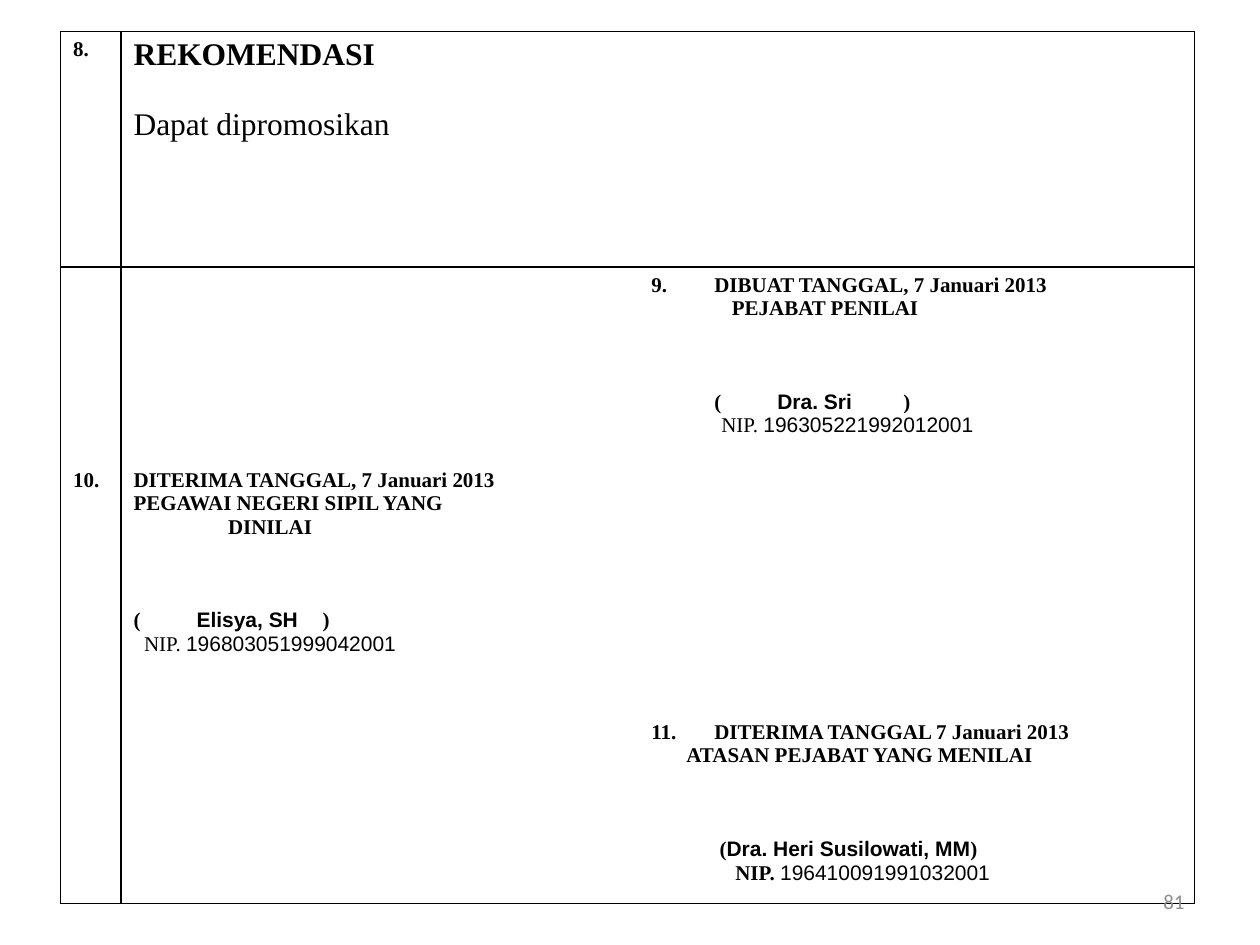
from lxml.etree import SubElement
from pptx import Presentation
from pptx.dml.color import RGBColor
from pptx.enum.text import MSO_ANCHOR as Anchor, PP_ALIGN as Align
from pptx.oxml.ns import qn
from pptx.util import Pt

BLACK = RGBColor(0x00, 0x00, 0x00)
GREY = RGBColor(0x8C, 0x8C, 0x8C)
SERIF = "Times New Roman"
SANS = "Arial"
SIGN_GAP = 40
COLUMN_WIDTHS = [34.56, 295.92, 317.52]
ROW_HEIGHTS = [134.64, 111.6, 144, 108]


def add_run(paragraph, text, font=SERIF, size=12, bold=True, color=BLACK):
    run = paragraph.add_run()
    run.text = text
    run.font.name = font
    run.font.size = Pt(size)
    run.font.bold = bold
    run.font.color.rgb = color


def format_paragraph(paragraph, align=Align.JUSTIFY, before=0, indent=0, tabs=()):
    paragraph.alignment = align
    paragraph.space_before = Pt(before)
    properties = paragraph._p.get_or_add_pPr()
    properties.set("marL", str(Pt(indent)))
    properties.set("indent", "0")
    if tabs:
        tab_list = SubElement(properties, qn("a:tabLst"))
        for position in tabs:
            SubElement(tab_list, qn("a:tab"), pos=str(Pt(position)), algn="l")


def write_lines(frame, lines):
    for index, (runs, layout) in enumerate(lines):
        paragraph = frame.add_paragraph() if index else frame.paragraphs[0]
        format_paragraph(paragraph, **layout)
        for text, style in runs:
            add_run(paragraph, text, **style)


def line(text, layout=None, **style):
    return [(text, style)], layout or {}


def signature(opening, name, closing, **layout):
    runs = [(opening, {}), (name, {"font": SANS}), (closing, {})]
    return runs, {"before": SIGN_GAP, **layout}


def employee_number(number, indent, bold=False):
    runs = [("NIP. ", {"bold": bold}), (number, {"font": SANS, "bold": False})]
    return runs, {"indent": indent}


def set_borders(cell, sides):
    properties = cell._tc.get_or_add_tcPr()
    for position, side in enumerate("LRTB"):
        border = SubElement(properties, qn(f"a:ln{side}"), w=str(Pt(1)))
        properties.insert(position, border)
        if side in sides:
            fill = SubElement(border, qn("a:solidFill"))
            SubElement(fill, qn("a:srgbClr"), val=str(BLACK))
        else:
            SubElement(border, qn("a:noFill"))


def border_sides(row, column):
    sides = "L" if column < 2 else "R"
    if column == 0:
        sides += "R"
    if row == 0:
        sides += "TB"
        if column == 1:
            sides += "R"
    if row == 1:
        sides += "T"
    if row == len(ROW_HEIGHTS) - 1:
        sides += "B"
    return sides


def add_assessment_table(slide, left, top):
    table = slide.shapes.add_table(
        len(ROW_HEIGHTS), len(COLUMN_WIDTHS), Pt(left), Pt(top),
        Pt(sum(COLUMN_WIDTHS)), Pt(sum(ROW_HEIGHTS))).table
    table.first_row = False
    table.horz_banding = False
    for column, width in zip(table.columns, COLUMN_WIDTHS):
        column.width = Pt(width)
    for row, height in zip(table.rows, ROW_HEIGHTS):
        row.height = Pt(height)
    for row in range(len(ROW_HEIGHTS)):
        for column in range(len(COLUMN_WIDTHS)):
            cell = table.cell(row, column)
            cell.fill.background()
            set_borders(cell, border_sides(row, column))
    table.cell(0, 1).merge(table.cell(0, 2))

    contents = {
        (0, 0): [line("8.")],
        (0, 1): [
            line("REKOMENDASI", {"align": Align.LEFT}, size=18),
            line("Dapat dipromosikan", {"align": Align.LEFT, "before": 20},
                 size=18, bold=False),
        ],
        (1, 2): [
            line("9.\tDIBUAT TANGGAL, 7 Januari 2013", {"tabs": [22]}),
            line("PEJABAT PENILAI", {"indent": 46}),
            signature("\t(\t", "Dra. Sri", "\t)", tabs=[34, 80, 179]),
            employee_number("196305221992012001", 40),
        ],
        (2, 0): [line("10.")],
        (2, 1): [
            line("DITERIMA TANGGAL, 7 Januari 2013"),
            line("PEGAWAI NEGERI SIPIL YANG"),
            line("DINILAI", {"indent": 54}),
            signature("(\t", "Elisya, SH", "\t)", tabs=[40, 134]),
            employee_number("196803051999042001", 6),
        ],
        (3, 2): [
            line("11.\tDITERIMA TANGGAL 7 Januari 2013", {"tabs": [20]}),
            line("ATASAN PEJABAT YANG MENILAI", {"indent": 20}),
            signature("(", "Dra. Heri Susilowati, MM", ")", indent=39),
            employee_number("196410091991032001", 48, bold=True),
        ],
    }
    for (row, column), lines in contents.items():
        write_lines(table.cell(row, column).text_frame, lines)


def add_page_number(slide, left, top, width, height):
    frame = slide.shapes.add_textbox(Pt(left), Pt(top), Pt(width), Pt(height)).text_frame
    frame.word_wrap = True
    frame.vertical_anchor = Anchor.MIDDLE
    write_lines(frame, [line("81", {"align": Align.RIGHT},
                             font="Calibri", bold=False, color=GREY)])


def main():
    presentation = Presentation()
    presentation.slide_width = Pt(720)
    presentation.slide_height = Pt(540)
    slide = presentation.slides.add_slide(presentation.slide_layouts[6])
    add_assessment_table(slide, 34.56, 18)
    add_page_number(slide, 516, 500.4, 168, 28.8)
    presentation.save("out.pptx")


if __name__ == "__main__":
    main()
